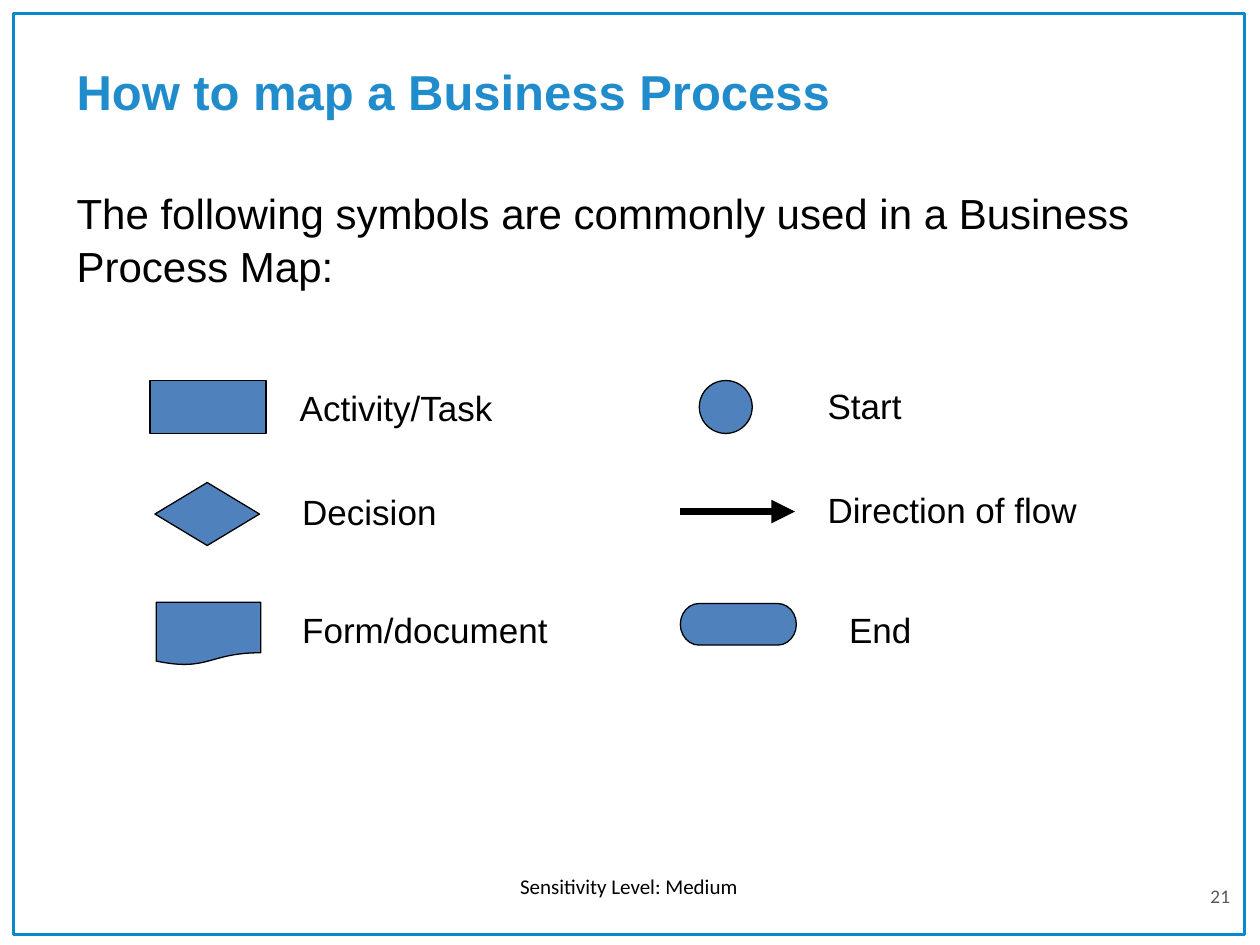
from lxml import etree
from pptx import Presentation
from pptx.dml.color import RGBColor
from pptx.enum.shapes import MSO_CONNECTOR, MSO_SHAPE as Shape
from pptx.enum.text import MSO_ANCHOR as Anchor, PP_ALIGN as Align
from pptx.oxml.ns import qn
from pptx.util import Inches, Pt

BLACK = RGBColor(0x00, 0x00, 0x00)
GREY = RGBColor(0x59, 0x59, 0x59)
SYMBOL_BLUE = RGBColor(0x4F, 0x81, 0xBD)
TITLE_BLUE = RGBColor(0x21, 0x8C, 0xCC)
FRAME_BLUE = RGBColor(0x09, 0x89, 0xCB)

deck = Presentation()
deck.slide_width, deck.slide_height = Inches(10), Inches(7.5)
page = deck.slides.add_slide(deck.slide_layouts[6])


def add_text(text, left, top, width, height, size, color=BLACK, font="Arial",
             bold=False, anchor=Anchor.TOP, align=Align.LEFT):
    box = page.shapes.add_textbox(Inches(left), Inches(top), Inches(width), Inches(height))
    box.text_frame.word_wrap = True
    box.text_frame.vertical_anchor = anchor
    para = box.text_frame.paragraphs[0]
    para.alignment = align
    span = para.add_run()
    span.text = text
    span.font.name, span.font.size, span.font.bold = font, Pt(size), bold
    span.font.color.rgb = color
    return para


def add_symbol(kind, left, top, width, height):
    symbol = page.shapes.add_shape(kind, Inches(left), Inches(top), Inches(width), Inches(height))
    symbol.shadow.inherit = False
    symbol.fill.solid()
    symbol.fill.fore_color.rgb = SYMBOL_BLUE
    symbol.line.color.rgb = BLACK
    symbol.line.width = Pt(0.75)
    return symbol


# Page frame
frame = add_symbol(Shape.RECTANGLE, 0.11, 0.11, 9.77, 7.31)
frame.fill.background()
frame.line.color.rgb = FRAME_BLUE
frame.line.width = Pt(1.75)

# Title and introduction
add_text("How to map a Business Process", 0.51, 0.13, 9, 1.18, 28, TITLE_BLUE,
         bold=True, anchor=Anchor.MIDDLE)
intro = add_text("The following symbols are commonly used in a Business Process Map:",
                 0.51, 1.42, 9, 5.23, 24)
intro.line_spacing = 1.05

# Symbols
for kind, left, top, width, height in [
    (Shape.FLOWCHART_PROCESS, 1.19, 3.02, 0.92, 0.42),
    (Shape.FLOWCHART_DECISION, 1.23, 3.83, 0.83, 0.5),
    (Shape.FLOWCHART_DOCUMENT, 1.24, 4.78, 0.83, 0.5),
    (Shape.FLOWCHART_CONNECTOR, 5.55, 3.02, 0.42, 0.42),
    (Shape.FLOWCHART_TERMINATOR, 5.4, 4.79, 0.92, 0.33),
]:
    add_symbol(kind, left, top, width, height)

# Flow arrow
arrow = page.shapes.add_connector(MSO_CONNECTOR.STRAIGHT, Inches(5.4), Inches(4.06),
                                  Inches(6.31), Inches(4.06))
arrow.line.color.rgb = BLACK
arrow.line.width = Pt(4.5)
etree.SubElement(arrow.line._get_or_add_ln(), qn("a:tailEnd"), type="triangle")
etree.SubElement(arrow._element.spPr, qn("a:effectLst"))

# Symbol labels
for label, left, top, width in [
    ("Activity/Task", 2.28, 3.02, 2.25),
    ("Decision", 2.3, 3.84, 1.5),
    ("Form/document", 2.3, 4.78, 3.25),
    ("Start", 6.47, 3, 2.75),
    ("Direction of flow", 6.47, 3.83, 2.5),
    ("End", 6.64, 4.78, 2.42),
]:
    add_text(label, left, top, width, 0.43, 20)

# Footer and page number
add_text("Sensitivity Level: Medium", 4.03, 6.88, 1.93, 0.3, 12, font="Calibri")
add_text("21", 9.32, 6.91, 0.73, 0.4, 11, GREY, "Calibri",
         anchor=Anchor.MIDDLE, align=Align.CENTER)

deck.save("out.pptx")
